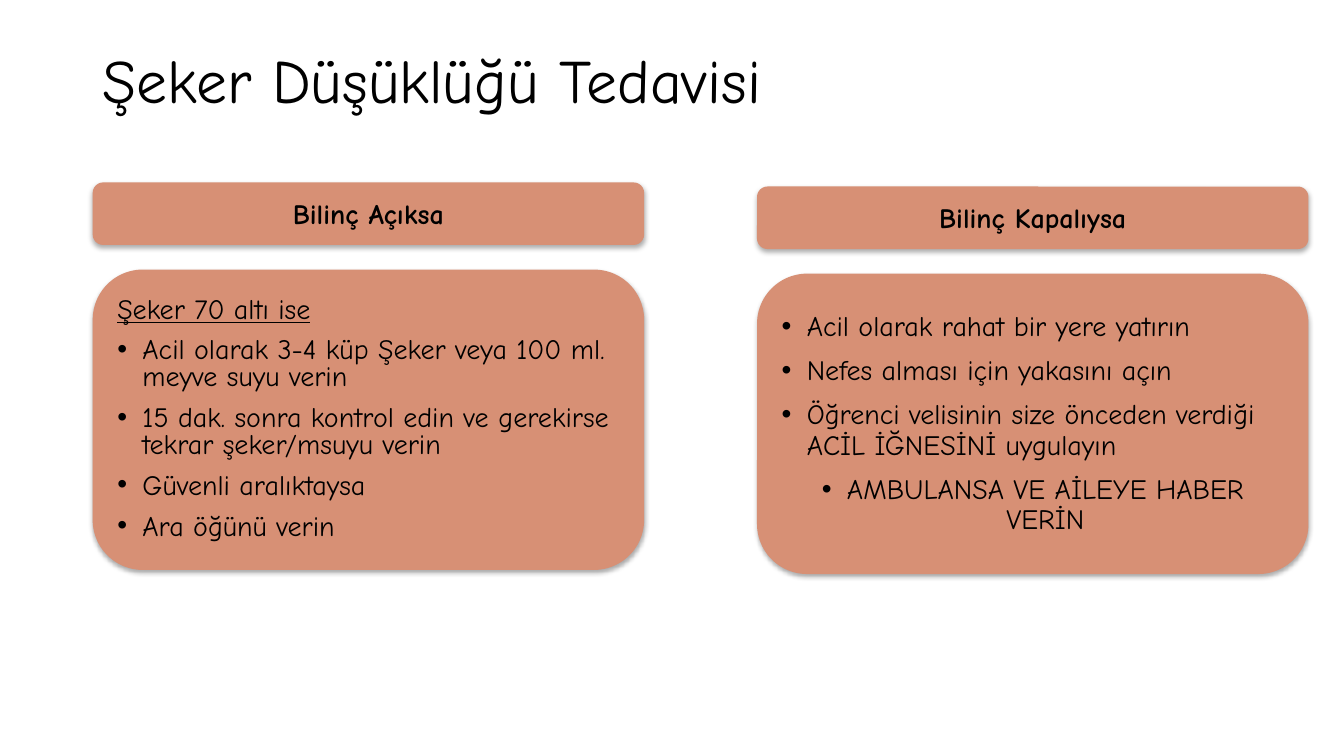
from dataclasses import dataclass
from typing import Any

from lxml.etree import SubElement
from pptx import Presentation
from pptx.dml.color import RGBColor
from pptx.enum.shapes import MSO_SHAPE
from pptx.enum.text import MSO_ANCHOR, MSO_AUTO_SIZE, PP_ALIGN
from pptx.oxml.ns import qn
from pptx.util import Inches, Pt

SLIDE_W, SLIDE_H = Inches(13.33), Inches(7.5)
FONT, INK, CLAY = "Comic Neue", "000000", "D79075"
CARD_W, HEAD_H, BODY_H, BODY_DROP = 41.03, 8.27, 39.73, 11.53


@dataclass
class Line:
    """One paragraph of a card."""
    text: str
    bullet: bool = True
    underline: bool = False
    align: Any = PP_ALIGN.LEFT


@dataclass
class Card:
    """A heading bar with its body; left and top are percentages of the slide."""
    left: float
    top: float
    heading: str
    spacing: float
    lines: list[Line]


CARDS = [
    Card(6.9, 24.13, "Bilinç Açıksa", 0.8, [
        Line("Şeker 70 altı ise", bullet=False, underline=True),
        Line("Acil olarak 3-4 küp Şeker veya 100 ml. meyve suyu verin"),
        Line("15 dak. sonra kontrol edin ve gerekirse tekrar şeker/msuyu verin"),
        Line("Güvenli aralıktaysa"),
        Line("Ara öğünü verin"),
    ]),
    Card(56.33, 24.67, "Bilinç Kapalıysa", 0.9, [
        Line("Acil olarak rahat bir yere yatırın"),
        Line("Nefes alması için yakasını açın"),
        Line("Öğrenci velisinin size önceden verdiği ACİL İĞNESİNİ uygulayın"),
        Line("AMBULANSA VE AİLEYE HABER VERİN", align=PP_ALIGN.CENTER),
    ]),
]


def rgb(value: str) -> RGBColor:
    """Turn a hex string into a colour."""
    return RGBColor.from_string(value)


def apply(target: Any, values: dict[str, Any]) -> None:
    """Set every attribute named in a dict of format values."""
    for name, value in values.items():
        setattr(target, name, value)


def place(sp: Any, left: float, top: float, width: float, height: float) -> None:
    """Place a shape by percentages of the slide."""
    apply(sp, {
        "left": int(SLIDE_W * left / 100), "top": int(SLIDE_H * top / 100),
        "width": int(SLIDE_W * width / 100), "height": int(SLIDE_H * height / 100),
    })


def write(p: Any, text: str, size: int, para: dict[str, Any], **font: Any) -> None:
    """Fill a paragraph with one formatted run."""
    apply(p, para)
    r = p.add_run()
    r.text = text
    apply(r.font, {"name": FONT, "size": Pt(size), **font})
    r.font.color.rgb = rgb(INK)


def add_bullet(p: Any) -> None:
    """Give a paragraph a hanging round bullet."""
    pPr = p._p.get_or_add_pPr()
    pPr.set("marL", str(Inches(0.25)))
    pPr.set("indent", str(-Inches(0.25)))
    SubElement(pPr, qn("a:buFont"), typeface="Arial")
    SubElement(pPr, qn("a:buChar"), char="•")


def add_shadow(sp: Any) -> None:
    """Add a soft shadow that falls straight down."""
    sp.shadow.inherit = False
    effects = sp._element.spPr.find(qn("a:effectLst"))
    outer = SubElement(effects, qn("a:outerShdw"), blurRad=str(Pt(3.5)),
                       dist=str(Pt(2.2)), dir="5400000", algn="ctr", rotWithShape="0")
    color = SubElement(outer, qn("a:srgbClr"), val=INK)
    SubElement(color, qn("a:alpha"), val="32000")


def add_panel(s: Any, left: float, top: float, height: float) -> Any:
    """Draw a rounded panel and return its text frame."""
    sp = s.shapes.add_shape(MSO_SHAPE.ROUNDED_RECTANGLE, 0, 0, 0, 0)
    place(sp, left, top, CARD_W, height)
    sp.fill.solid()
    sp.fill.fore_color.rgb = rgb(CLAY)
    sp.line.fill.background()
    add_shadow(sp)
    apply(sp.text_frame, {"word_wrap": True, "vertical_anchor": MSO_ANCHOR.MIDDLE})
    return sp.text_frame


def add_card(s: Any, card: Card) -> None:
    """Draw the heading bar and the body of a card."""
    tf = add_panel(s, card.left, card.top, HEAD_H)
    write(tf.paragraphs[0], card.heading, 20, {"alignment": PP_ALIGN.CENTER}, bold=True)
    tf = add_panel(s, card.left, card.top + BODY_DROP, BODY_H)
    for i, line in enumerate(card.lines):
        p = tf.add_paragraph() if i else tf.paragraphs[0]
        para = {"alignment": line.align, "line_spacing": card.spacing, "space_before": Pt(10)}
        write(p, line.text, 20, para, underline=line.underline)
        if line.bullet:
            add_bullet(p)


def add_title(s: Any, text: str) -> None:
    """Move and format the title placeholder."""
    sp = s.shapes.title
    place(sp, 6.9, 5.33, 86.25, 11.33)
    tf = sp.text_frame
    apply(tf, {"word_wrap": True, "auto_size": MSO_AUTO_SIZE.NONE,
               "vertical_anchor": MSO_ANCHOR.MIDDLE})
    write(tf.paragraphs[0], text, 44, {"alignment": PP_ALIGN.LEFT, "line_spacing": 0.9})


def main() -> None:
    """Build and save the slide."""
    prs = Presentation()
    apply(prs, {"slide_width": SLIDE_W, "slide_height": SLIDE_H})
    s = prs.slides.add_slide(prs.slide_layouts[5])
    add_title(s, "Şeker Düşüklüğü Tedavisi")
    for card in CARDS:
        add_card(s, card)
    prs.save("out.pptx")


if __name__ == "__main__":
    main()
